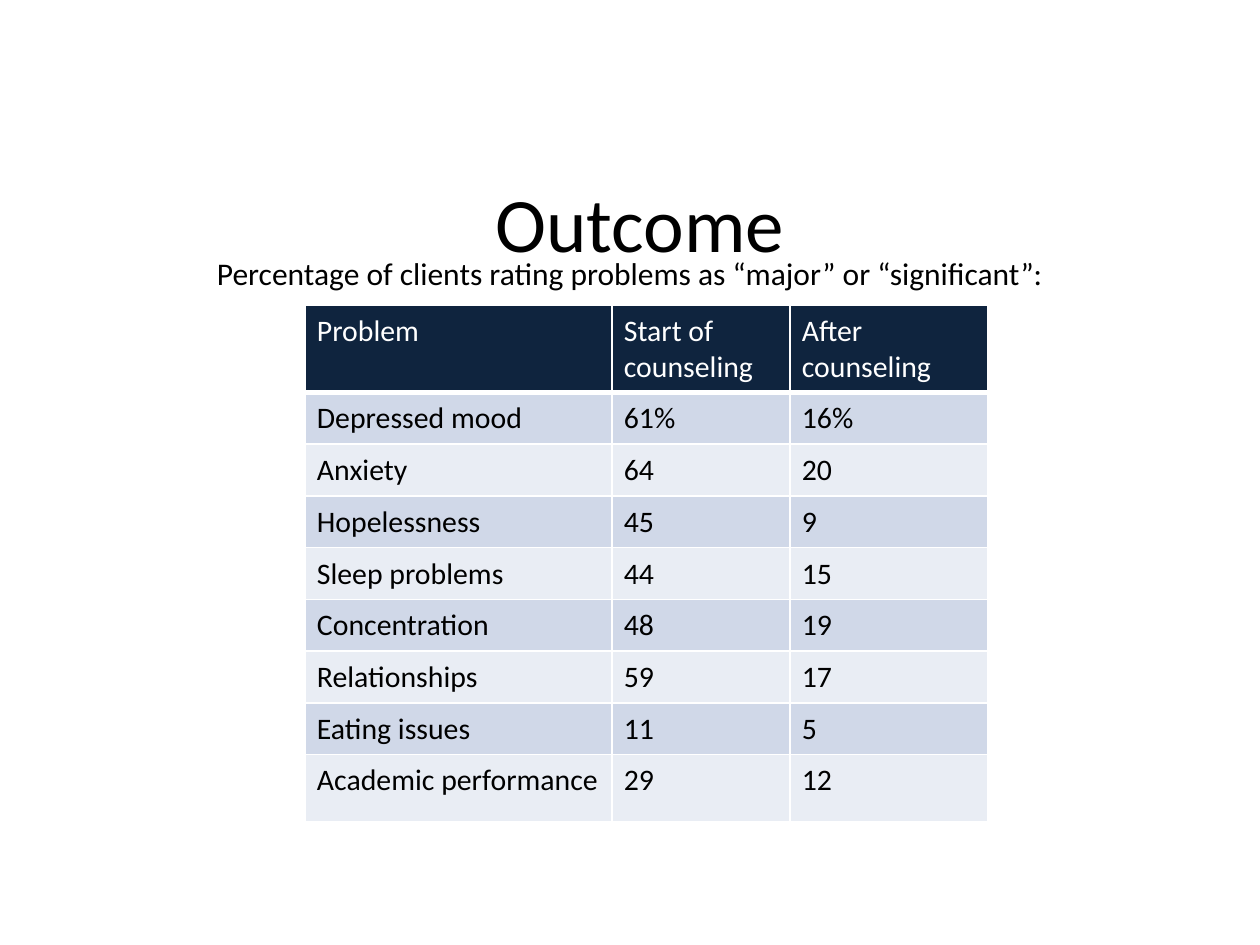
from lxml import etree
from pptx import Presentation
from pptx.dml.color import RGBColor
from pptx.enum.text import MSO_ANCHOR, PP_ALIGN
from pptx.oxml.ns import qn
from pptx.util import Emu, Pt

PX = 914400 // 126
CENTER = PP_ALIGN.CENTER
TOP = MSO_ANCHOR.TOP
MIDDLE = MSO_ANCHOR.MIDDLE
FONT = "Calibri"
COLORS = {
    "text": "000000",
    "white": "FFFFFF",
    "head": "0F243E",
    "odd": "D0D8E8",
    "even": "E9EDF4",
}
ROWS = [
    ("Problem", "Start of counseling", "After counseling"),
    ("Depressed mood", "61%", "16%"),
    ("Anxiety", "64", "20"),
    ("Hopelessness", "45", "9"),
    ("Sleep problems", "44", "15"),
    ("Concentration", "48", "19"),
    ("Relationships", "59", "17"),
    ("Eating issues", "11", "5"),
    ("Academic performance", "29", "12"),
]
WIDTHS = [307, 178, 198]
HEIGHTS = [68] + [39] * 7 + [67]


def px(n):
    return Emu(n * PX)


def color(name):
    return RGBColor.from_string(COLORS[name])


def style(par, size, tint):
    for run in par.runs:
        run.font.name = FONT
        run.font.size = Pt(size)
        run.font.color.rgb = color(tint)


def add_text(slide, box, text, size, anchor):
    """Add a centred line of text and return its paragraph."""
    frame = slide.shapes.add_textbox(*map(px, box)).text_frame
    frame.word_wrap = True
    frame.vertical_anchor = anchor
    frame.text = text
    par = frame.paragraphs[0]
    par.alignment = CENTER
    style(par, size, "text")
    return par


def add_border(cell, side, width):
    """Draw one side; call before the cell gets its fill."""
    line = etree.SubElement(cell._tc.get_or_add_tcPr(), qn("a:ln" + side),
                            w=str(Pt(width)))
    fill = etree.SubElement(line, qn("a:solidFill"))
    etree.SubElement(fill, qn("a:srgbClr"), val=COLORS["white"])


def fill_cell(cell, text, row):
    cell.text = text
    cell.margin_left = cell.margin_right = px(12)
    cell.margin_top = cell.margin_bottom = px(8)
    for side in "LRTB":
        heavy = (row == 0 and side == "B") or (row == 1 and side == "T")
        add_border(cell, side, 3 if heavy else 1)
    back = "head" if row == 0 else "odd" if row % 2 else "even"
    cell.fill.solid()
    cell.fill.fore_color.rgb = color(back)
    style(cell.text_frame.paragraphs[0], 17, "text" if row else "white")


def add_grid(slide):
    shape = slide.shapes.add_table(len(ROWS), len(WIDTHS), px(305), px(305),
                                   px(sum(WIDTHS)), px(sum(HEIGHTS)))
    table = shape.table
    for col, width in zip(table.columns, WIDTHS):
        col.width = px(width)
    for row, height in zip(table.rows, HEIGHTS):
        row.height = px(height)
    for r, texts in enumerate(ROWS):
        for c, text in enumerate(texts):
            fill_cell(table.cell(r, c), text, r)


def main():
    deck = Presentation()
    deck.slide_width, deck.slide_height = px(1260), px(945)
    slide = deck.slides.add_slide(deck.slide_layouts[6])
    add_text(slide, (73, 168, 1134, 107), "Outcome", 44, MIDDLE)
    lead = add_text(
        slide, (63, 252, 1134, 63),
        "Percentage of clients rating problems as “major” or “significant”:",
        18, TOP)
    lead.line_spacing = 0.9
    add_grid(slide)
    deck.save("out.pptx")


if __name__ == "__main__":
    main()
